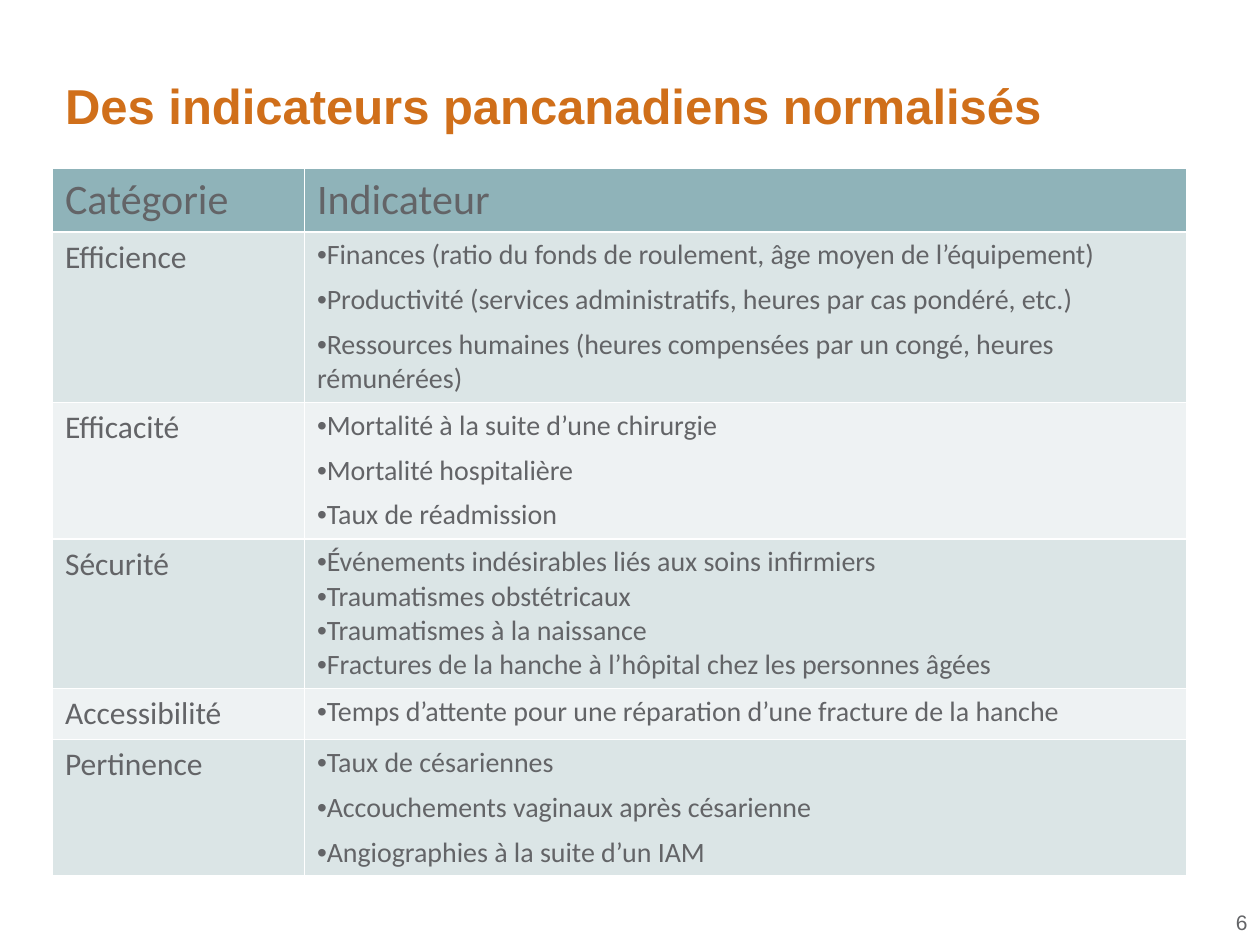
from lxml import etree
from pptx import Presentation
from pptx.dml.color import RGBColor
from pptx.enum.text import MSO_ANCHOR, PP_ALIGN
from pptx.oxml.ns import qn
from pptx.util import Pt

TITLE = "Des indicateurs pancanadiens normalisés"
HEADS = ["Catégorie", "Indicateur"]
ROWS = [
    ("Efficience", 97, 6, [
        "Finances (ratio du fonds de roulement, âge moyen de l’équipement)",
        "Productivité (services administratifs, heures par cas pondéré, etc.)",
        "Ressources humaines (heures compensées par un congé, heures rémunérées)"]),
    ("Efficacité", 78, 6, [
        "Mortalité à la suite d’une chirurgie",
        "Mortalité hospitalière",
        "Taux de réadmission"]),
    ("Sécurité", 85, 0, [
        "Événements indésirables liés aux soins infirmiers",
        "Traumatismes obstétricaux",
        "Traumatismes à la naissance",
        "Fractures de la hanche à l’hôpital chez les personnes âgées"]),
    ("Accessibilité", 29, 0, [
        "Temps d’attente pour une réparation d’une fracture de la hanche"]),
    ("Pertinence", 78, 6, [
        "Taux de césariennes",
        "Accouchements vaginaux après césarienne",
        "Angiographies à la suite d’un IAM"]),
]
PAGE = "6"
GREY, ORANGE, WHITE = "636467", "D06F1A", "FFFFFF"
HEAD, BANDS = "8FB3B9", ["DBE5E6", "EEF2F3"]
LEFT, WIDTH, HEAD_H = 30, 648, 36
COLS = [144, 504]


def color(code):
    return RGBColor.from_string(code)


def write(frame, lines, size, face="Calibri", ink=GREY, bold=False,
          align=PP_ALIGN.LEFT, gap=0, bullet=False):
    frame.word_wrap = True
    for i, line in enumerate(lines):
        para = frame.paragraphs[0] if i == 0 else frame.add_paragraph()
        para.alignment = align
        para.space_before = Pt(gap if i else 0)
        if bullet:
            props = para._p.get_or_add_pPr()
            etree.SubElement(props, qn("a:buFont"), typeface="Arial")
            etree.SubElement(props, qn("a:buChar")).set("char", "•")
        run = para.add_run()
        run.text = line
        font = run.font
        font.size, font.name, font.bold = Pt(size), face, bold
        font.color.rgb = color(ink)


def style(cell, fill):
    props = cell._tc.get_or_add_tcPr()
    for side in "LRTB":
        line = etree.SubElement(props, qn("a:ln" + side), w=str(Pt(1)))
        solid = etree.SubElement(line, qn("a:solidFill"))
        etree.SubElement(solid, qn("a:srgbClr"), val=WHITE)
    cell.fill.solid()
    cell.fill.fore_color.rgb = color(fill)


deck = Presentation()
deck.slide_width, deck.slide_height = Pt(720), Pt(540)
slide = deck.slides.add_slide(deck.slide_layouts[5])

title = slide.shapes.title
title.left, title.top, title.width, title.height = Pt(LEFT), Pt(24), Pt(WIDTH), Pt(72)
title.text_frame.vertical_anchor = MSO_ANCHOR.MIDDLE
write(title.text_frame, [TITLE], 28, face="Arial", ink=ORANGE, bold=True)

heights = [HEAD_H] + [row[1] for row in ROWS]
table = slide.shapes.add_table(len(heights), len(COLS), Pt(LEFT), Pt(96),
                               Pt(WIDTH), Pt(sum(heights))).table
for col, wide in zip(table.columns, COLS):
    col.width = Pt(wide)
for row, high in zip(table.rows, heights):
    row.height = Pt(high)

for c, head in enumerate(HEADS):
    cell = table.cell(0, c)
    style(cell, HEAD)
    write(cell.text_frame, [head], 24)
for r, (name, high, gap, items) in enumerate(ROWS, 1):
    label, detail = table.cell(r, 0), table.cell(r, 1)
    for cell in (label, detail):
        style(cell, BANDS[(r - 1) % 2])
    write(label.text_frame, [name], 18)
    write(detail.text_frame, items, 16, gap=gap, bullet=True)

page = slide.shapes.add_textbox(Pt(642), Pt(516), Pt(78), Pt(24))
write(page.text_frame, [PAGE], 12, face="Arial", align=PP_ALIGN.RIGHT)

deck.save("out.pptx")
